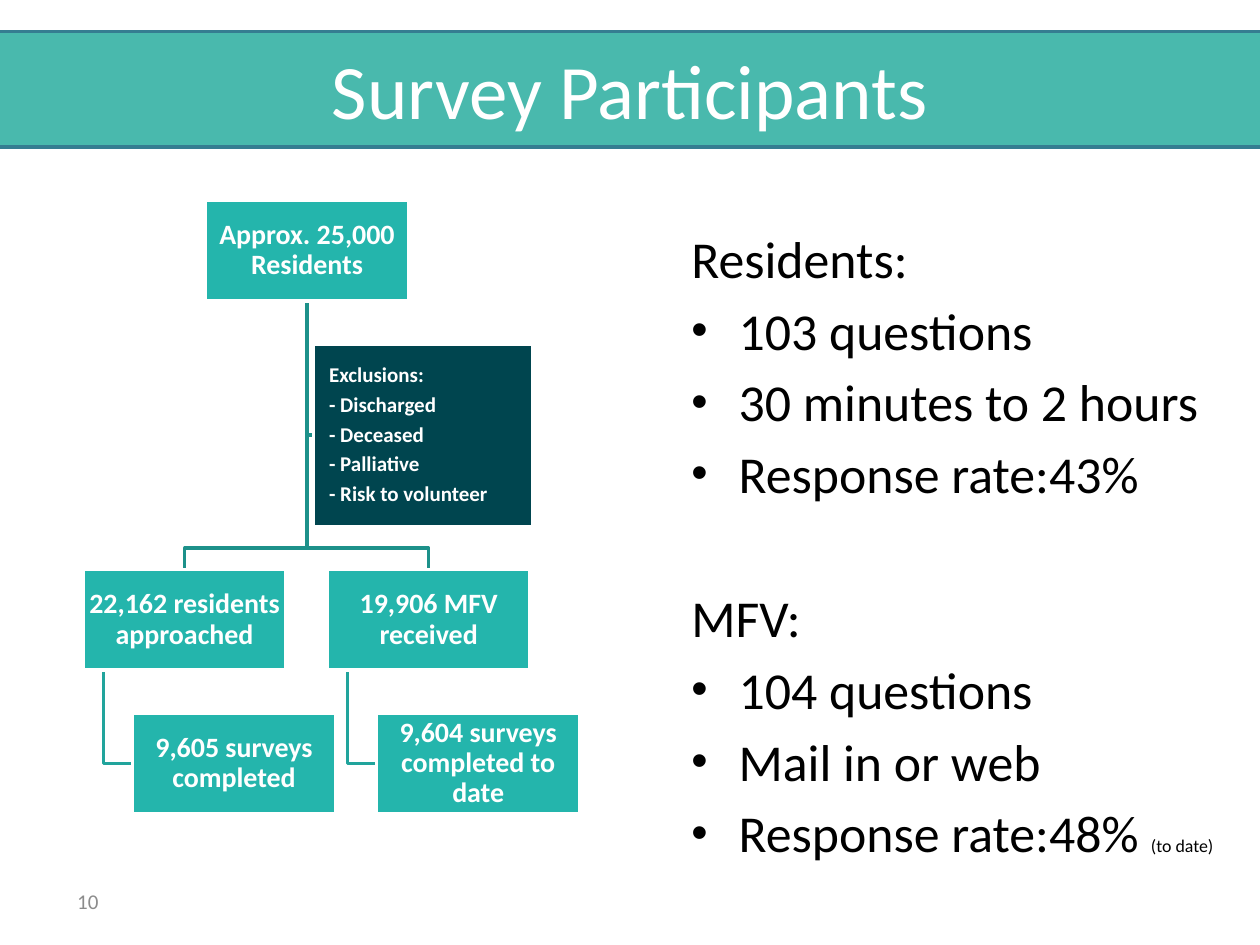
import pptx
import pptx.util
import pptx.dml.color
import pptx.enum.shapes
import pptx.enum.text
from lxml import etree

Pt = pptx.util.Pt
RGBColor = pptx.dml.color.RGBColor
RECTANGLE = pptx.enum.shapes.MSO_SHAPE.RECTANGLE
MIDDLE = pptx.enum.text.MSO_ANCHOR.MIDDLE
CENTER = pptx.enum.text.PP_ALIGN.CENTER
LEFT = pptx.enum.text.PP_ALIGN.LEFT

WHITE = RGBColor(0xFF, 0xFF, 0xFF)
BLACK = RGBColor(0x00, 0x00, 0x00)
GREY = RGBColor(0x8C, 0x8C, 0x8C)
BAND = RGBColor(0x49, 0xB9, 0xAD)
BAND_EDGE = RGBColor(0x35, 0x7D, 0x91)
TEAL = RGBColor(0x24, 0xB5, 0xAC)
DARK_TEAL = RGBColor(0x00, 0x45, 0x4F)
UPPER_LINK = RGBColor(0x1D, 0x91, 0x8A)
LOWER_LINK = RGBColor(0x21, 0xA4, 0x9C)

FONT = "Calibri"
NODE_WIDTH, NODE_HEIGHT = 116, 57.5
LIST_SIZE = 29.6
LIST_GAP = 5.4


def style(font, size, color, bold=False):
    font.name = FONT
    font.size = Pt(size)
    font.color.rgb = color
    font.bold = bold


def add_panel(slide, box, fill, edge):
    panel = slide.shapes.add_shape(RECTANGLE, *map(Pt, box))
    panel.shadow.inherit = False
    panel.fill.solid()
    panel.fill.fore_color.rgb = fill
    panel.line.color.rgb = edge
    panel.line.width = Pt(2)
    return panel


def add_label(slide, box, text, size, color, align):
    label = slide.shapes.add_textbox(*map(Pt, box))
    frame = label.text_frame
    frame.word_wrap = True
    frame.vertical_anchor = MIDDLE
    frame.text = text
    frame.paragraphs[0].alignment = align
    style(frame.paragraphs[0].font, size, color)


def add_title(slide, box):
    left, top, width, height = box
    add_panel(slide, (left - 12, top, width + 24, height), BAND, BAND_EDGE)
    add_label(slide, (left + 11, top, width - 22, height),
              "Survey Participants", 44, WHITE, CENTER)


def add_node(slide, box, lines, size=16, fill=TEAL, align=CENTER, indent=0.7, gap=0):
    frame = add_panel(slide, box, fill, WHITE).text_frame
    frame.word_wrap = True
    frame.vertical_anchor = MIDDLE
    frame.margin_left = Pt(indent)
    frame.margin_right = frame.margin_top = frame.margin_bottom = Pt(0.7)
    frame.text = "\n".join(lines)
    for index, paragraph in enumerate(frame.paragraphs):
        paragraph.alignment = align
        paragraph.line_spacing = 0.9
        paragraph.space_before = Pt(gap if index else 0)
        style(paragraph.font, size, WHITE, True)


def add_link(slide, points, color):
    start, *others = [(Pt(x), Pt(y)) for x, y in points]
    builder = slide.shapes.build_freeform(*start)
    builder.add_line_segments(others, close=False)
    link = builder.convert_to_shape()
    link.shadow.inherit = False
    link.fill.background()
    link.line.color.rgb = color
    link.line.width = Pt(2)


def add_flowchart(slide, box):
    left, top, width, height = box
    root_left = left + 70
    trunk = root_left + NODE_WIDTH / 2
    root_bottom = top + NODE_HEIGHT
    exclusions = (trunk + 3.8, top + 82, 125.3, 104.4)
    exclusions_middle = exclusions[1] + exclusions[3] / 2
    branch_top = top + 211
    leaf_top = top + height - NODE_HEIGHT
    leaf_middle = leaf_top + NODE_HEIGHT / 2
    fork = branch_top - 12.2

    branches = [
        ("22,162 residents approached", "9,605 surveys completed"),
        ("19,906 MFV received", "9,604 surveys completed to date"),
    ]
    add_link(slide, [(trunk, root_bottom), (trunk, exclusions_middle),
                     (exclusions[0], exclusions_middle)], UPPER_LINK)
    branch_step = width - NODE_WIDTH - 28.3
    for index, (branch, leaf) in enumerate(branches):
        branch_left = left + index * branch_step
        leaf_left = branch_left + 28.3
        center = branch_left + NODE_WIDTH / 2
        hanger = branch_left + NODE_WIDTH / 10
        add_link(slide, [(trunk, root_bottom), (trunk, fork),
                         (center, fork), (center, branch_top)], UPPER_LINK)
        add_link(slide, [(hanger, branch_top + NODE_HEIGHT), (hanger, leaf_middle),
                         (leaf_left, leaf_middle)], LOWER_LINK)
        add_node(slide, (branch_left, branch_top, NODE_WIDTH, NODE_HEIGHT), [branch])
        add_node(slide, (leaf_left, leaf_top, NODE_WIDTH, NODE_HEIGHT), [leaf])

    add_node(slide, (root_left, top, NODE_WIDTH, NODE_HEIGHT), ["Approx. 25,000 Residents"])
    add_node(slide, exclusions,
             ["Exclusions:", "- Discharged", "- Deceased", "- Palliative", "- Risk to volunteer"],
             size=12, fill=DARK_TEAL, align=LEFT, indent=8.8, gap=4)


def add_bullet(paragraph):
    properties = paragraph._p.get_or_add_pPr()
    properties.set("marL", str(Pt(27)))
    properties.set("indent", str(-Pt(27)))
    namespace = "{http://schemas.openxmlformats.org/drawingml/2006/main}"
    etree.SubElement(properties, namespace + "buSzPct", val="90000")
    etree.SubElement(properties, namespace + "buFont", typeface="Arial")
    etree.SubElement(properties, namespace + "buChar", char="•")


def add_survey_facts(slide, box):
    groups = [
        ("Residents:", ["103 questions", "30 minutes to 2 hours", "Response rate:43%"]),
        ("MFV:", ["104 questions", "Mail in or web", "Response rate:48% "]),
    ]
    frame = slide.shapes.add_textbox(*map(Pt, box)).text_frame
    frame.word_wrap = True
    frame.text = "\n".join(line for heading, facts in groups for line in [heading, *facts])
    headings = [heading for heading, facts in groups]
    for index, paragraph in enumerate(frame.paragraphs):
        if paragraph.text in headings:
            paragraph.space_before = Pt(47 if index else 0)
        else:
            paragraph.space_before = Pt(LIST_GAP)
            add_bullet(paragraph)
        style(paragraph.font, LIST_SIZE, BLACK)
    note = frame.paragraphs[-1].add_run()
    note.text = "(to date)"
    note.font.size = Pt(10.2)


def main():
    deck = pptx.Presentation()
    deck.slide_width, deck.slide_height = Pt(720), Pt(540)
    slide = deck.slides.add_slide(deck.slide_layouts[6])
    add_title(slide, (0, 18, 720, 66))
    add_flowchart(slide, (47.5, 114.5, 283.8, 350.5))
    add_survey_facts(slide, (388, 126, 332, 356))
    add_label(slide, (37, 500.5, 168, 29), "10", 12, GREY, LEFT)
    deck.save("out.pptx")


if __name__ == "__main__":
    main()
